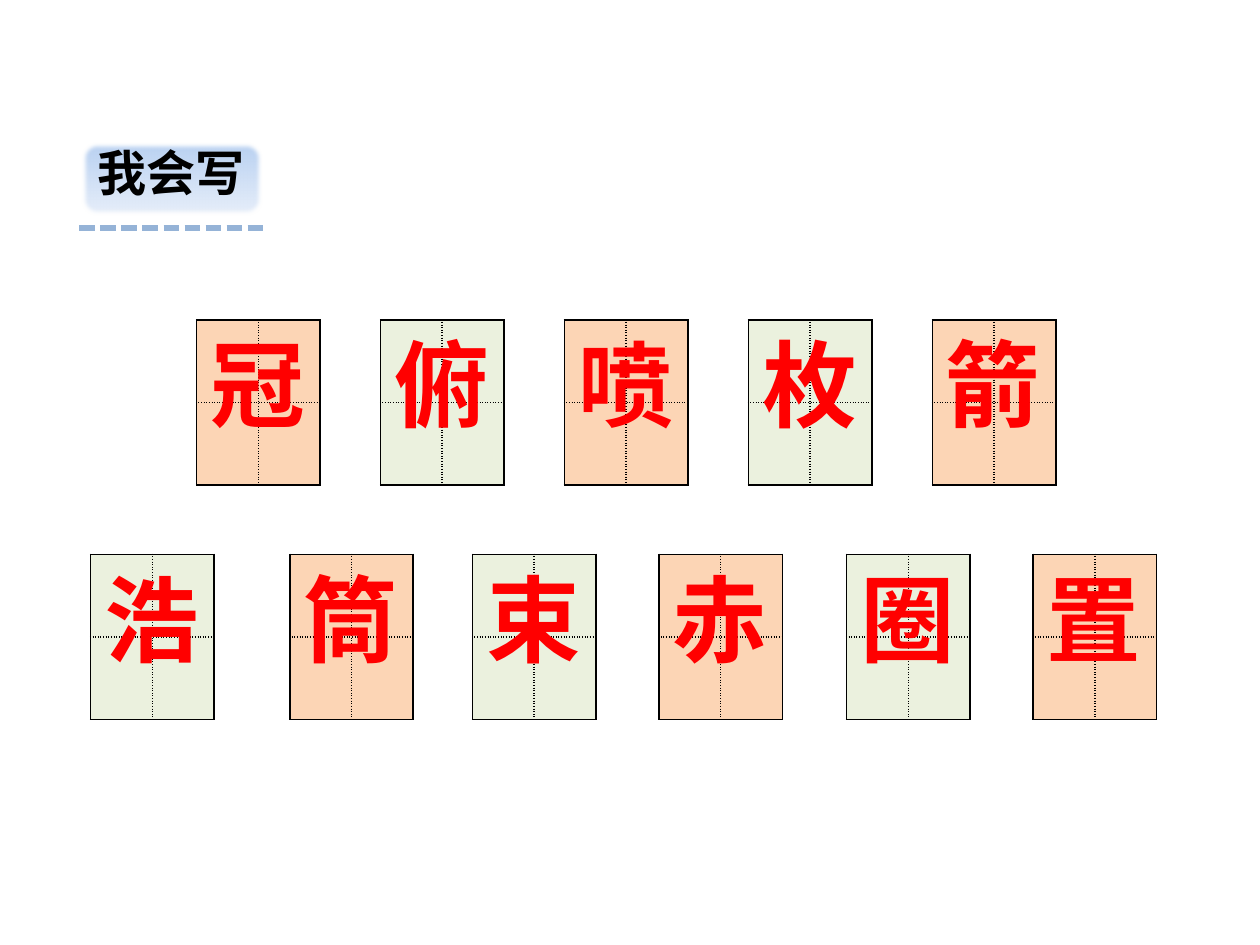
import pptx
import pptx.util
import pptx.dml.color
import pptx.enum.dml
import pptx.enum.shapes
import pptx.enum.text
import pptx.oxml
from pptx.util import Inches

FONT = "Noto Sans CJK SC"
NAMESPACE = 'xmlns:a="http://schemas.openxmlformats.org/drawingml/2006/main"'


def color(hex_string):
    return pptx.dml.color.RGBColor.from_string(hex_string)


def format_text(paragraph, size, hex_string):
    for run in paragraph.runs:
        run.font.size = pptx.util.Pt(size)
        run.font.bold = True
        run.font.name = FONT
        run.font.color.rgb = color(hex_string)
        run.font._element.append(
            pptx.oxml.parse_xml(f'<a:ea {NAMESPACE} typeface="{FONT}"/>'))


presentation = pptx.Presentation()
presentation.slide_width = Inches(10)
presentation.slide_height = Inches(7.5)
slide = presentation.slides.add_slide(presentation.slide_layouts[5])

# Heading badge with soft edges, placed behind the title
badge = slide.shapes.add_shape(
    pptx.enum.shapes.MSO_SHAPE.ROUNDED_RECTANGLE,
    Inches(0.65), Inches(1.13), Inches(1.43), Inches(0.58))
badge.fill.gradient()
badge.fill.gradient_angle = 270
for stop, hex_string in zip(badge.fill.gradient_stops, ("B7D0F1", "E8EFFA")):
    stop.color.rgb = color(hex_string)
badge.line.fill.background()
badge._element.spPr.append(pptx.oxml.parse_xml(
    f'<a:effectLst {NAMESPACE}><a:softEdge rad="31750"/></a:effectLst>'))
slide.shapes.title._element.addprevious(badge._element)

# Heading text
title = slide.shapes.title
title.left, title.top = Inches(0.65), Inches(1.1)
title.width, title.height = Inches(1.41), Inches(0.58)
title.text_frame.text = "我会写"
title.text_frame.word_wrap = False
title.text_frame.vertical_anchor = pptx.enum.text.MSO_ANCHOR.MIDDLE
heading = title.text_frame.paragraphs[0]
heading.alignment = pptx.enum.text.PP_ALIGN.CENTER
heading.line_spacing = 0.9
format_text(heading, 28, "000000")

# Dashed rule under the heading
rule = slide.shapes.add_connector(
    pptx.enum.shapes.MSO_CONNECTOR.STRAIGHT,
    Inches(0.63), Inches(1.81), Inches(2.09), Inches(1.81))
rule.line.color.rgb = color("95B3D7")
rule.line.width = pptx.util.Pt(3)
rule.line.dash_style = pptx.enum.dml.MSO_LINE.SQUARE_DOT
rule._element.spPr.append(pptx.oxml.parse_xml(f"<a:effectLst {NAMESPACE}/>"))

# Character cards: a 2 x 2 writing grid with a large character on top
ORANGE, GREEN = "FCD5B5", "EBF1DE"
card_rows = [
    (2.54, "冠俯喷枚箭", [1.56 + 1.46 * i for i in range(5)], (ORANGE, GREEN)),
    (4.4, "浩筒束赤圈置", [0.72, 2.3, 3.75, 5.23, 6.72, 8.2], (GREEN, ORANGE)),
]
for top, characters, lefts, fills in card_rows:
    for index, (character, left) in enumerate(zip(characters, lefts)):
        table = slide.shapes.add_table(
            2, 2, Inches(left), Inches(top), Inches(0.98), Inches(1.31)).table
        for row in range(2):
            for column in range(2):
                cell = table.cell(row, column)
                # Solid outside edges, dotted guide lines inside
                outer_sides = ("LR"[column], "TB"[row])
                for side in "LRTB":
                    dash = "solid" if side in outer_sides else "sysDot"
                    cell._tc.get_or_add_tcPr().append(pptx.oxml.parse_xml(
                        f'<a:ln{side} {NAMESPACE} w="12700"><a:solidFill>'
                        '<a:srgbClr val="000000"/></a:solidFill>'
                        f'<a:prstDash val="{dash}"/></a:ln{side}>'))
                cell.fill.solid()
                cell.fill.fore_color.rgb = color(fills[index % 2])

        text_box = slide.shapes.add_textbox(
            Inches(left + 0.01), Inches(top), Inches(0.96), Inches(1.01))
        text_box.text_frame.text = character
        text_box.text_frame.word_wrap = False
        text_box.text_frame.auto_size = pptx.enum.text.MSO_AUTO_SIZE.SHAPE_TO_FIT_TEXT
        paragraph = text_box.text_frame.paragraphs[0]
        format_text(paragraph, 54, "FF0000")
        # Thin white outline around the character
        paragraph.runs[0].font._element.insert(0, pptx.oxml.parse_xml(
            f'<a:ln {NAMESPACE} w="9525"><a:solidFill>'
            '<a:srgbClr val="FFFFFF"/></a:solidFill></a:ln>'))

presentation.save("out.pptx")
